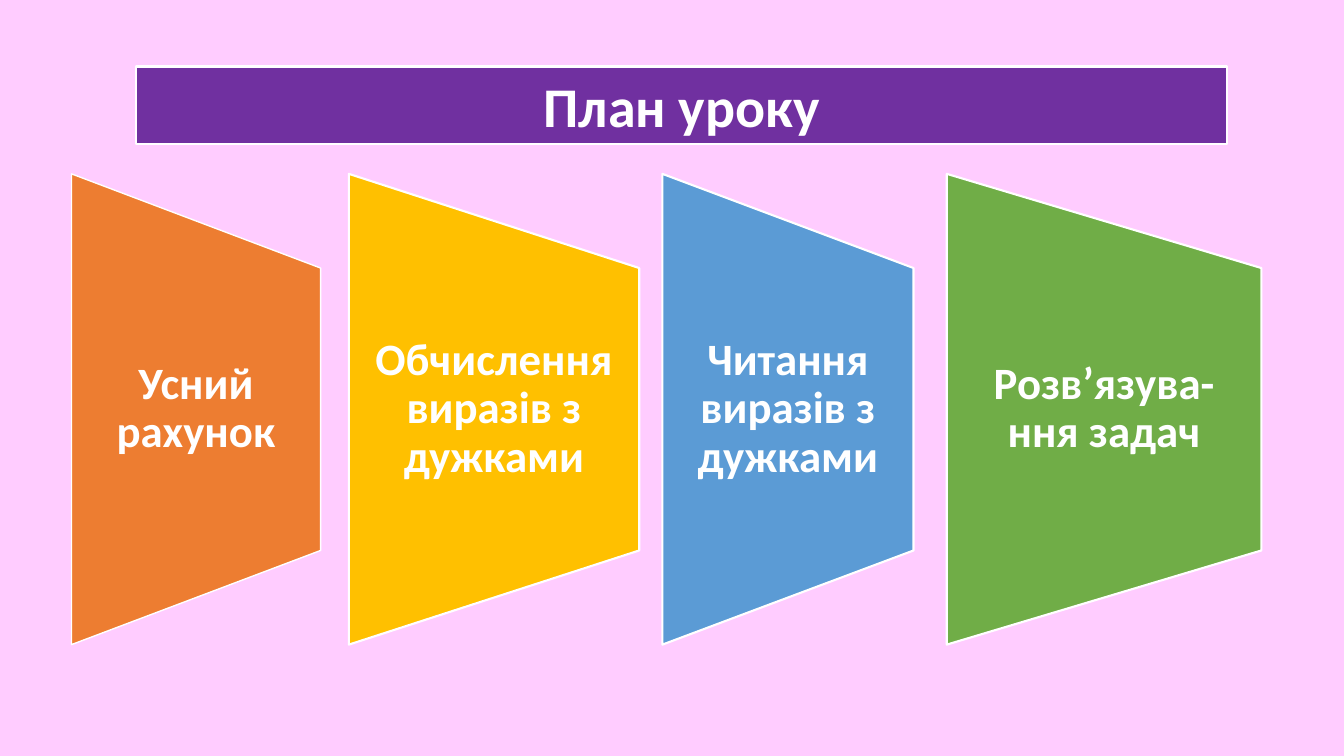
from pptx import Presentation
from pptx.dml.color import RGBColor
from pptx.enum.shapes import MSO_SHAPE as Shape
from pptx.enum.text import MSO_ANCHOR as Anchor, MSO_AUTO_SIZE as AutoSize, PP_ALIGN as Align
from pptx.util import Inches, Pt

PINK = RGBColor(0xFF, 0xCC, 0xFF)
PURPLE = RGBColor(0x70, 0x30, 0xA0)
ORANGE = RGBColor(0xED, 0x7D, 0x31)
GOLD = RGBColor(0xFF, 0xC0, 0x00)
BLUE = RGBColor(0x5B, 0x9B, 0xD5)
GREEN = RGBColor(0x70, 0xAD, 0x47)
WHITE = RGBColor(0xFF, 0xFF, 0xFF)

# Vertical extent shared by all panels, in inches
PANEL_HEIGHT = 4.67
PANEL_MIDDLE = 4.06
TEXT_HEIGHT = 2.8

# Left, width, colour, outline in points, text
STAGES = [
    (0.71, 2.47, ORANGE, 1, "Усний рахунок"),
    (3.46, 2.88, GOLD, 1.5, "Обчислення виразів з дужками"),
    (6.57, 2.49, BLUE, 1.5, "Читання виразів з дужками"),
    (9.39, 3.12, GREEN, 1.5, "Розв’язува-ння задач"),
]


def set_values(target, values):
    for name, value in values.items():
        setattr(target, name, value)


def paint(shape, color, outline):
    shape.fill.solid()
    shape.fill.fore_color.rgb = color
    shape.line.color.rgb = WHITE
    shape.line.width = Pt(outline)


def write(box, text, size, margin, frame_values, line_spacing=1.0):
    frame = box.text_frame
    frame.text = text
    set_values(frame, {"word_wrap": True, "auto_size": AutoSize.NONE,
                       "vertical_anchor": Anchor.MIDDLE,
                       "margin_left": Inches(margin),
                       "margin_right": Inches(margin), **frame_values})
    para = frame.paragraphs[0]
    set_values(para, {"alignment": Align.CENTER, "line_spacing": line_spacing,
                      "space_before": Pt(0)})
    span = para.runs[0]
    set_values(span.font, {"name": "Calibri", "size": Pt(size), "bold": True})
    span.font.color.rgb = WHITE


def add_title(page, text):
    title = page.shapes.title
    set_values(title, {"left": Inches(1.35), "top": Inches(0.66),
                       "width": Inches(10.82), "height": Inches(0.77)})
    paint(title, PURPLE, 1.5)
    write(title, text, 40, 0.1, {})


def add_stage(page, left, width, color, outline, text):
    # The panel lies on its side, so its width and height swap around the centre
    panel = page.shapes.add_shape(
        Shape.FLOWCHART_MANUAL_OPERATION,
        Inches(left + (width - PANEL_HEIGHT) / 2), Inches(PANEL_MIDDLE - width / 2),
        Inches(PANEL_HEIGHT), Inches(width))
    panel.rotation = 270
    panel.shadow.inherit = False
    paint(panel, color, outline)

    # Upright text over the panel
    box = page.shapes.add_textbox(
        Inches(left), Inches(PANEL_MIDDLE - TEXT_HEIGHT / 2),
        Inches(width), Inches(TEXT_HEIGHT))
    write(box, text, 32, 0.22, {"margin_top": 0, "margin_bottom": 0}, 0.9)


def main():
    deck = Presentation()
    set_values(deck, {"slide_width": Inches(13.33), "slide_height": Inches(7.5)})
    page = deck.slides.add_slide(deck.slide_layouts.get_by_name("Title Only"))
    page.background.fill.solid()
    page.background.fill.fore_color.rgb = PINK

    add_title(page, "План уроку")
    for stage in STAGES:
        add_stage(page, *stage)

    deck.save("out.pptx")


if __name__ == "__main__":
    main()
